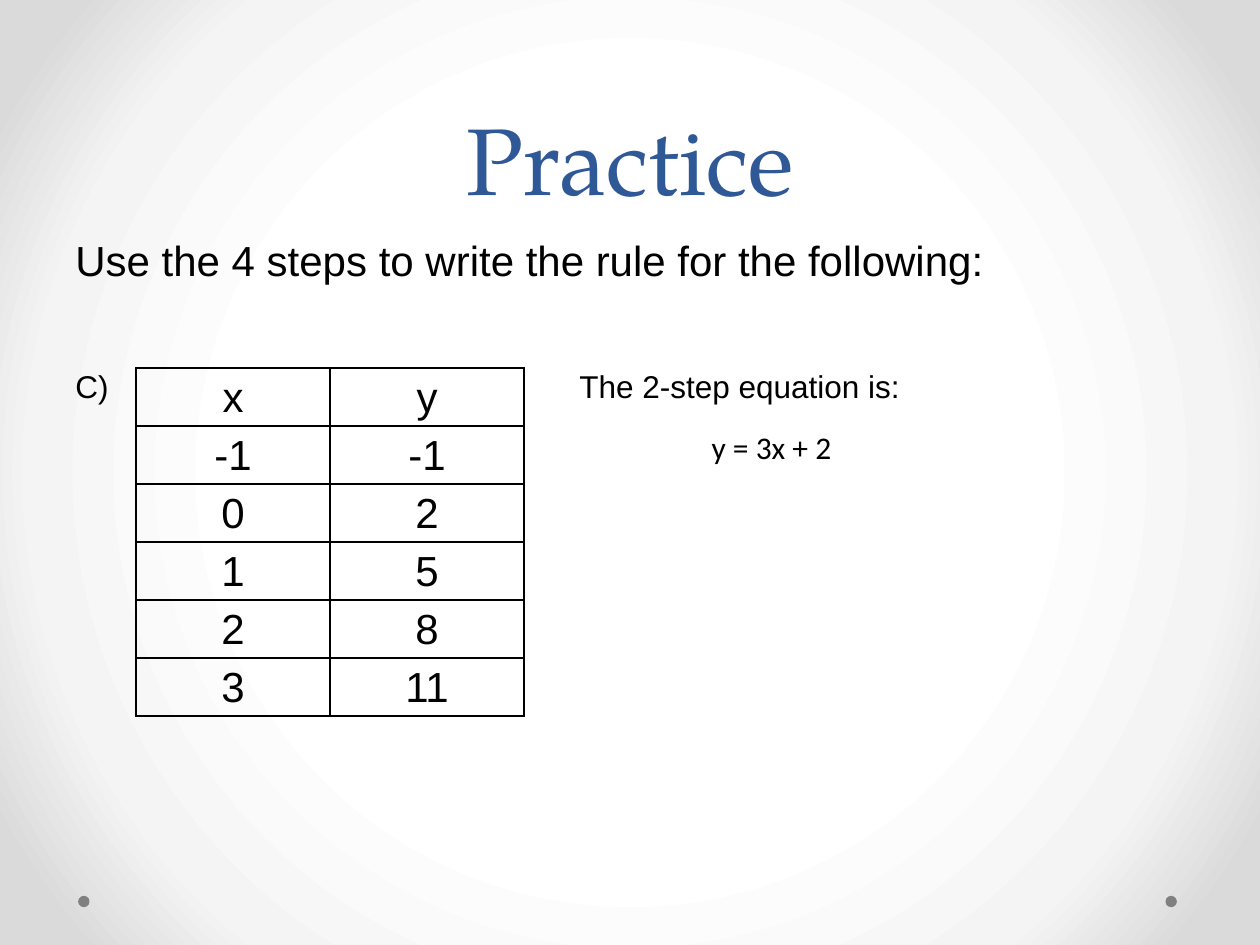
from lxml import etree
from pptx import Presentation
from pptx.dml.color import RGBColor
from pptx.enum.shapes import MSO_SHAPE
from pptx.enum.text import MSO_ANCHOR, PP_ALIGN
from pptx.oxml import parse_xml
from pptx.oxml.ns import qn
from pptx.util import Inches, Pt

OVAL = MSO_SHAPE.OVAL
BOTTOM = MSO_ANCHOR.BOTTOM
CENTER = PP_ALIGN.CENTER
LEFT = PP_ALIGN.LEFT
NS = 'xmlns:a="http://schemas.openxmlformats.org/drawingml/2006/main"'
BLACK = "000000"
STOPS = [(50, "FFFFFF"), (76, "F4F4F4"), (92, "DADADA")]
ROWS = [("x", "y"), ("-1", "-1"), ("0", "2"), ("1", "5"), ("2", "8"), ("3", "11")]


def paint(hue):
    return RGBColor.from_string(hue)


def add_run(para, text, size, font="Arial", hue=BLACK):
    run = para.add_run()
    run.text = text
    run.font.size = Pt(size)
    run.font.name = font
    run.font.bold = False
    run.font.color.rgb = paint(hue)


def place(shape, box):
    shape.left, shape.top, shape.width, shape.height = map(Inches, box)


def add_back(slide):
    fill = slide.background.fill
    fill.solid()
    stops = "".join(
        f'<a:gs pos="{pos * 1000}"><a:srgbClr val="{hue}"/></a:gs>' for pos, hue in STOPS
    )
    grad = parse_xml(
        f'<a:gradFill {NS} rotWithShape="1"><a:gsLst>{stops}</a:gsLst>'
        '<a:path path="circle"><a:fillToRect l="50000" t="50000" r="50000" b="50000"/>'
        "</a:path></a:gradFill>"
    )
    back = slide.background._cSld.bg.bgPr
    back.replace(back.find(qn("a:solidFill")), grad)


def add_dots(slide, box):
    left, top, width, size = box
    for x in (left, left + width - size):
        dot = slide.shapes.add_shape(OVAL, *map(Inches, (x, top, size, size)))
        dot.shadow.inherit = False
        dot.fill.solid()
        dot.fill.fore_color.rgb = paint("808080")
        dot.line.fill.background()


def add_title(slide, box):
    title = slide.shapes.title
    place(title, box)
    frame = title.text_frame
    frame.vertical_anchor = BOTTOM
    para = frame.paragraphs[0]
    para.alignment = CENTER
    para.line_spacing = Pt(58)
    add_run(para, "Practice", 54, "TeX Gyre Pagella", "2F5897")


def add_body(slide, box):
    frame = slide.shapes.add_textbox(*map(Inches, box)).text_frame
    frame.word_wrap = True
    lines = [
        ("Use the 4 steps to write the rule for the following:", 24, "Arial", 0, None),
        ("C)\tThe 2-step equation is:", 18, "Arial", 34, 4),
        ("\ty = 3x + 2", 18, "Calibri", 0, 5.05),
    ]
    for i, (text, size, font, gap, tab) in enumerate(lines):
        para = frame.add_paragraph() if i else frame.paragraphs[0]
        para.alignment = LEFT
        para.line_spacing = 1.15
        para.space_before = Pt(gap)
        para.space_after = Pt(10)
        if tab:
            tabs = etree.SubElement(para._p.get_or_add_pPr(), qn("a:tabLst"))
            etree.SubElement(tabs, qn("a:tab"), pos=str(Inches(tab)), algn="l")
        add_run(para, text, size, font)


def add_edges(cell):
    props = cell._tc.get_or_add_tcPr()
    for i, side in enumerate("LRTB"):
        props.insert(i, parse_xml(
            f'<a:ln{side} {NS} w="{Pt(1)}"><a:solidFill><a:srgbClr val="{BLACK}"/>'
            f"</a:solidFill></a:ln{side}>"
        ))


def add_grid(slide, box):
    shape = slide.shapes.add_table(len(ROWS), len(ROWS[0]), *map(Inches, box))
    table = shape.table
    table.first_row = table.horz_banding = False
    for row, texts in zip(table.rows, ROWS):
        for cell, text in zip(row.cells, texts):
            cell.fill.background()
            add_edges(cell)
            cell.margin_left = cell.margin_right = Inches(0.07)
            cell.margin_top = cell.margin_bottom = 0
            para = cell.text_frame.paragraphs[0]
            para.alignment = CENTER
            para.line_spacing = 1.15
            add_run(para, text, 24)


def main():
    deck = Presentation()
    deck.slide_width, deck.slide_height = Inches(10), Inches(7.5)
    slide = deck.slides.add_slide(deck.slide_layouts[5])
    add_back(slide)
    add_dots(slide, (0.62, 7.11, 8.72, 0.09))
    add_title(slide, (0.5, 0, 9, 1.75))
    add_body(slide, (0.5, 1.75, 9, 4.95))
    add_grid(slide, (1.08, 2.92, 3.08, 2.58))
    deck.save("out.pptx")


if __name__ == "__main__":
    main()
